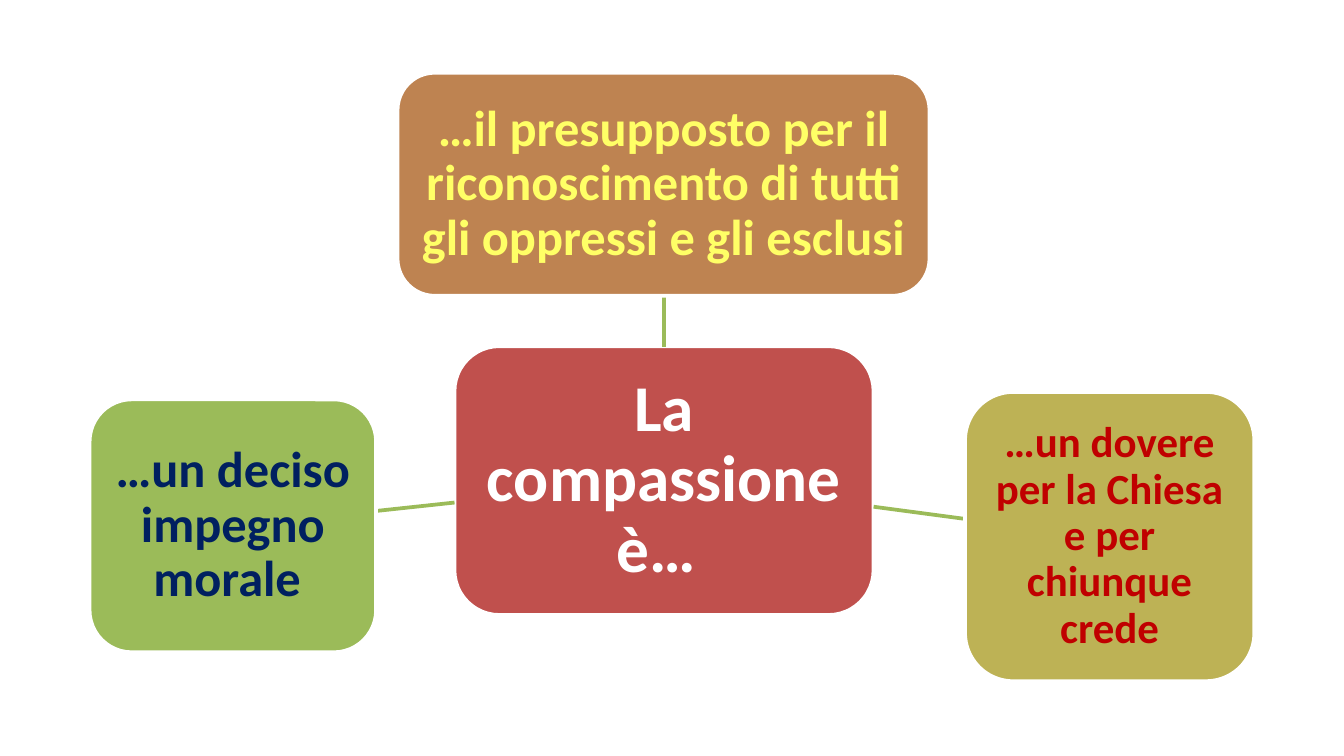
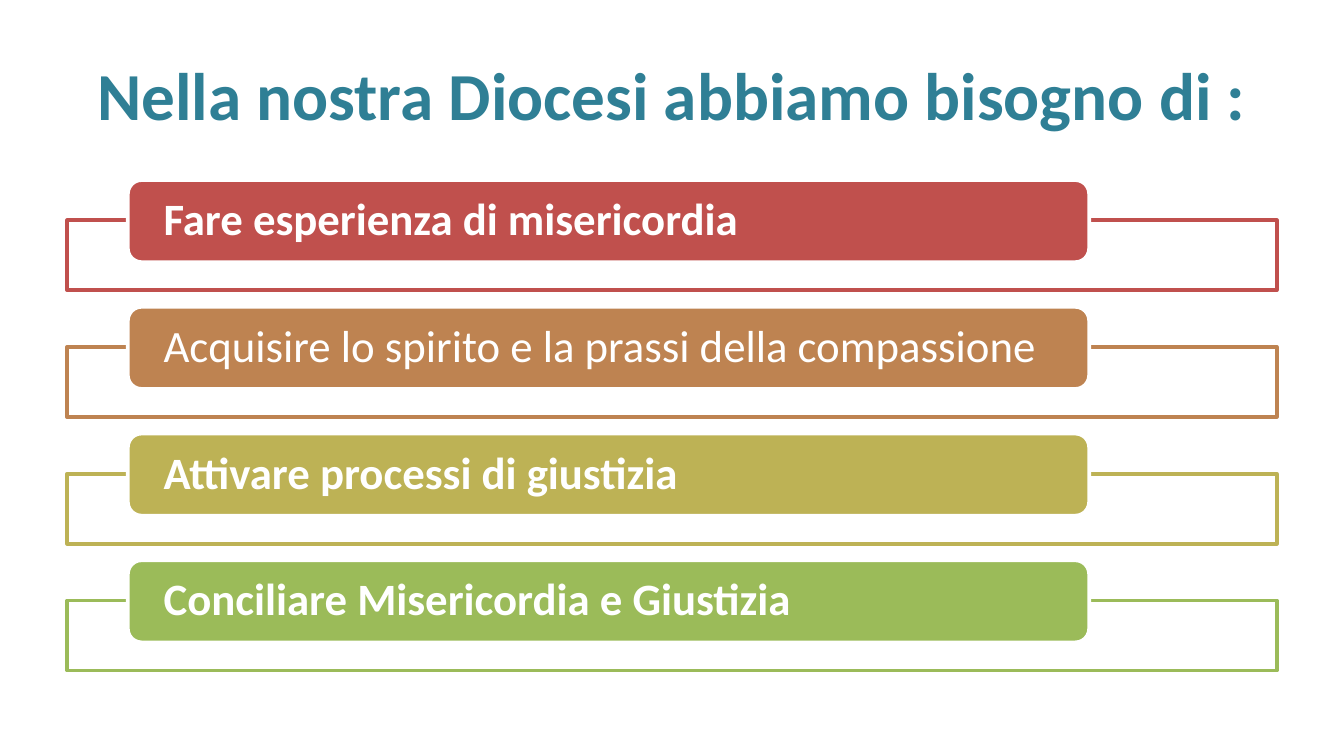
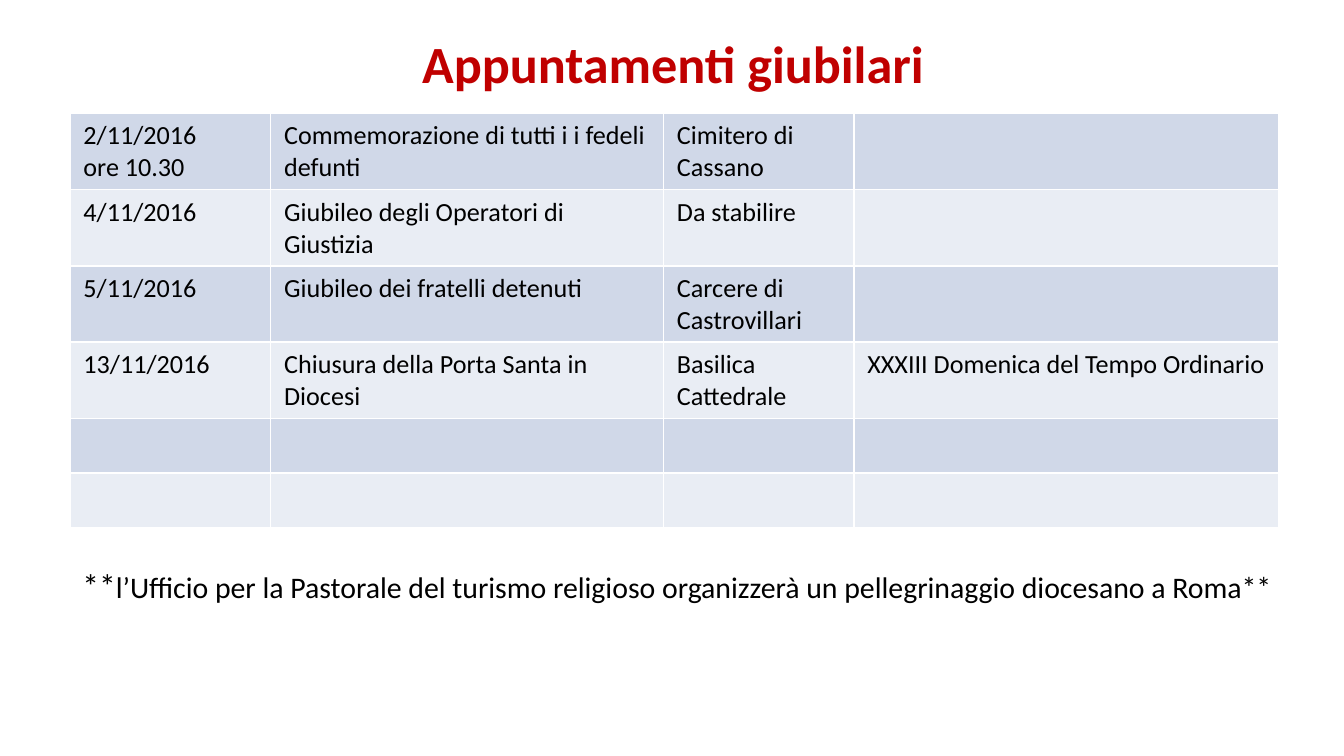
from lxml.etree import SubElement
from pptx import Presentation
from pptx.dml.color import RGBColor
from pptx.enum.shapes import MSO_CONNECTOR, MSO_SHAPE
from pptx.enum.text import MSO_ANCHOR, PP_ALIGN
from pptx.oxml.ns import qn
from pptx.util import Pt

FONT = "Calibri"
COLOURS = {
    "white": "FFFFFF", "black": "000000", "red": "C0504D", "brown": "BE8351",
    "olive": "BDB255", "green": "9BBB59", "yellow": "FFFF66", "navy": "002060",
    "crimson": "C00000", "teal": "2F7F95", "band": "D0D8E8", "pale": "E9EDF4",
}
LINE_WIDTH = 2


def colour(name):
    return RGBColor.from_string(COLOURS[name])


def write_text(frame, text, size, ink="black", bold=False, align=PP_ALIGN.LEFT,
               anchor=MSO_ANCHOR.TOP, insets=(7.2, 3.6), spacing=None):
    """Fill a frame; text is a string or a list of (words, size) spans."""
    frame.word_wrap = True
    frame.vertical_anchor = anchor
    frame.margin_left = frame.margin_right = Pt(insets[0])
    frame.margin_top = frame.margin_bottom = Pt(insets[1])
    spans = [(text, size)] if isinstance(text, str) else text
    para = frame.paragraphs[0]
    para.alignment = align
    if spacing:
        para.line_spacing = spacing
    for words, points in spans:
        for number, line in enumerate(words.split("\n")):
            if number:
                para = frame.add_paragraph()
                para.alignment = align
            span = para.add_run()
            span.text = line
            font = span.font
            font.name, font.size, font.bold = FONT, Pt(points), bold
            font.color.rgb = colour(ink)


def add_text(page, area, text, size, **style):
    box = page.shapes.add_textbox(*map(Pt, area))
    write_text(box.text_frame, text, size, **style)


def add_title(page, area, text, size, ink):
    add_text(page, area, text, size, ink=ink, bold=True,
             align=PP_ALIGN.CENTER, anchor=MSO_ANCHOR.MIDDLE)


def add_box(page, kind, area, fill, line="white"):
    box = page.shapes.add_shape(kind, *map(Pt, area))
    box.shadow.inherit = False
    box.fill.solid()
    box.fill.fore_color.rgb = colour(fill)
    box.line.color.rgb = colour(line)
    box.line.width = Pt(LINE_WIDTH)
    return box


def add_bubble(page, area, fill, text, size, ink, inset):
    box = add_box(page, MSO_SHAPE.ROUNDED_RECTANGLE, area, fill)
    write_text(box.text_frame, text, size, ink=ink, bold=True,
               align=PP_ALIGN.CENTER, anchor=MSO_ANCHOR.MIDDLE,
               insets=(inset, inset), spacing=0.9)


def add_link(page, ends):
    link = page.shapes.add_connector(MSO_CONNECTOR.STRAIGHT, *map(Pt, ends))
    link.line.color.rgb = colour("green")
    link.line.width = Pt(LINE_WIDTH)
    SubElement(link._element.spPr, qn("a:effectLst"))


def add_need(page, top, hue, text, bold):
    """A coloured bar set on the upper edge of an open frame."""
    frame = add_box(page, MSO_SHAPE.RECTANGLE, (36, top + 21.5, 648, 37.5), "white", hue)
    tint = frame._element.spPr.find(qn("a:solidFill"))[0]
    SubElement(tint, qn("a:alpha"), val="90000")
    bar = add_box(page, MSO_SHAPE.ROUNDED_RECTANGLE, (68.5, top, 515, 44), hue)
    write_text(bar.text_frame, text, 24, ink="white", bold=bold,
               anchor=MSO_ANCHOR.MIDDLE, insets=(17, 0), spacing=0.9)


def add_borders(cell):
    properties = cell._tc.get_or_add_tcPr()
    for side in ("lnL", "lnR", "lnT", "lnB"):
        edge = SubElement(properties, qn(f"a:{side}"), w=str(Pt(1)))
        fill = SubElement(edge, qn("a:solidFill"))
        SubElement(fill, qn("a:srgbClr"), val=COLOURS["white"])


def add_calendar(page, left, top, widths, row_height, rows):
    table = page.shapes.add_table(
        len(rows), len(widths), Pt(left), Pt(top),
        Pt(sum(widths)), Pt(row_height * len(rows))).table
    table.first_row = table.horz_banding = False
    for column, width in zip(table.columns, widths):
        column.width = Pt(width)
    for row_number, row in enumerate(rows):
        table.rows[row_number].height = Pt(row_height)
        for column_number in range(len(widths)):
            cell = table.cell(row_number, column_number)
            add_borders(cell)
            cell.fill.solid()
            cell.fill.fore_color.rgb = colour("pale" if row_number % 2 else "band")
            if column_number < len(row):
                write_text(cell.text_frame, row[column_number], 14)


def compassion_page(page):
    # Centre
    add_bubble(page, (243.5, 185.5, 224.5, 144), "red",
               "La compassione è… ", 35, "white", 7)
    # Each link with the bubble at its end
    meanings = [
        ((355.75, 185.75, 355.75, 157.75), (213, 39, 285, 119.5), "brown",
         "…il presupposto per il riconoscimento di tutti gli oppressi e gli esclusi",
         27, "yellow", 5),
        ((468, 271.5, 517, 278), (517, 210, 155, 155), "olive",
         "…un dovere per la Chiesa e per chiunque crede", 23, "crimson", 4.5),
        ((243.5, 269.25, 201.5, 273.75), (48, 214, 153.5, 135.5), "green",
         "…un deciso impegno morale ", 27, "navy", 5),
    ]
    for ends, *bubble in meanings:
        add_link(page, ends)
        add_bubble(page, *bubble)


def needs_page(page):
    add_title(page, (36, 16.5, 648, 67.5),
              "Nella nostra Diocesi abbiamo bisogno di :", 36, "teal")
    needs = [
        ("red", "Fare esperienza di misericordia", True),
        ("brown", "Acquisire lo spirito e la prassi della compassione", False),
        ("olive", "Attivare processi di giustizia", True),
        ("green", "Conciliare Misericordia e Giustizia", True),
    ]
    for number, need in enumerate(needs):
        add_need(page, 96.5 + 67.9 * number, *need)


def calendar_page(page):
    add_title(page, (36.5, 0, 648, 67.5), "Appuntamenti giubilari", 28, "crimson")
    # The last two rows stay free
    rows = [
        ("2/11/2016\nore 10.30", "Commemorazione di tutti i i fedeli defunti",
         "Cimitero di Cassano"),
        ("4/11/2016", "Giubileo degli Operatori di Giustizia", "Da stabilire"),
        ("5/11/2016", "Giubileo dei fratelli detenuti", "Carcere di Castrovillari"),
        ("13/11/2016", "Chiusura della Porta Santa in Diocesi",
         "Basilica Cattedrale", "XXXIII Domenica del Tempo Ordinario"),
        (),
        (),
    ]
    add_calendar(page, 37.5, 60.75, (107.5, 210.5, 102, 227.5), 29.2, rows)
    # Note under the table
    note = ("l’Ufficio per la Pastorale del turismo religioso organizzerà "
            "un pellegrinaggio diocesano a Roma**")
    add_text(page, (37, 299, 669, 29), [("**", 18), (note, 16)], 16)


def main():
    deck = Presentation()
    deck.slide_width, deck.slide_height = Pt(720), Pt(405)
    for build in (compassion_page, needs_page, calendar_page):
        build(deck.slides.add_slide(deck.slide_layouts[6]))
    deck.save("out.pptx")


if __name__ == "__main__":
    main()
